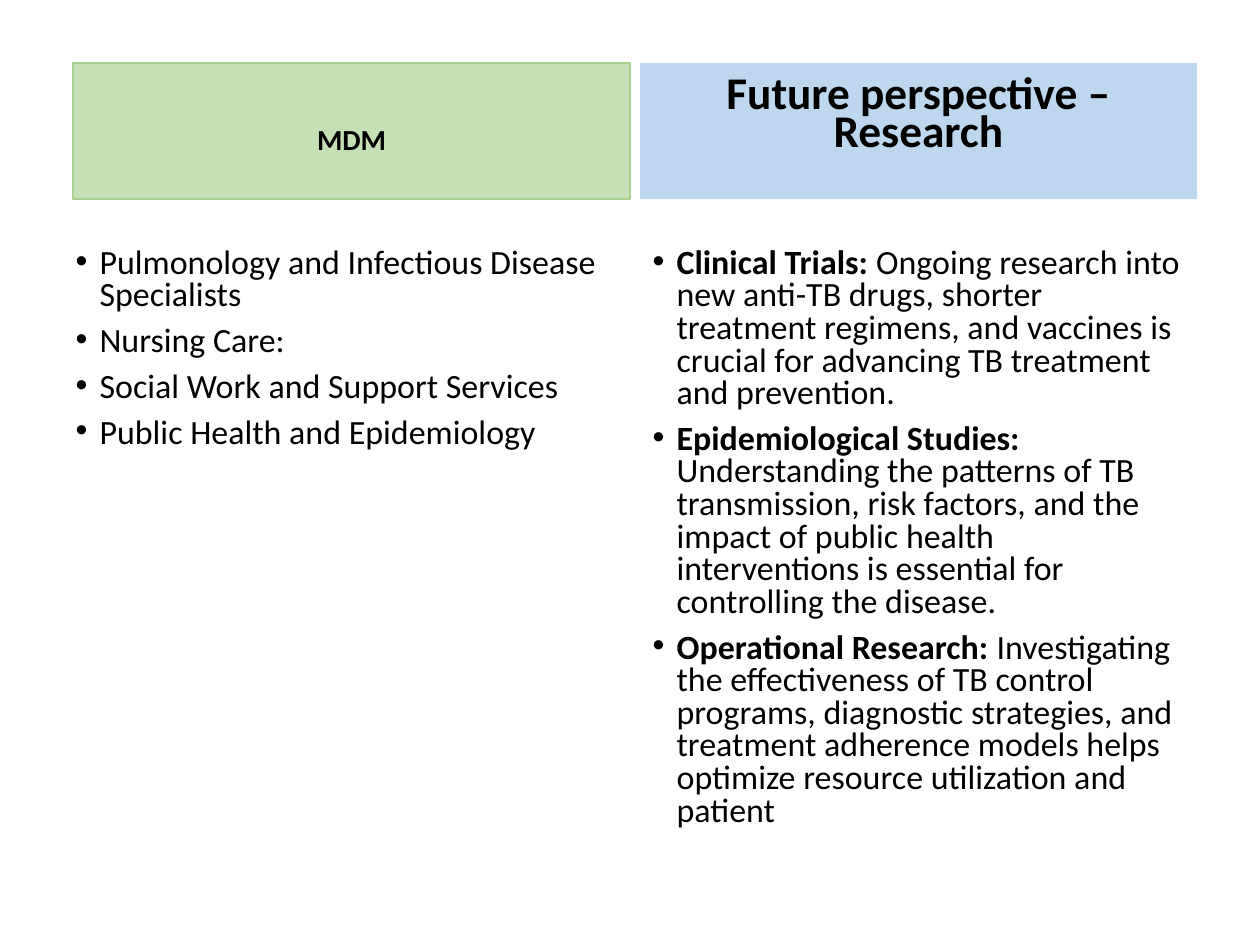
from dataclasses import dataclass

from lxml import etree
from pptx import Presentation
from pptx.dml.color import RGBColor
from pptx.enum.text import MSO_ANCHOR, MSO_AUTO_SIZE, PP_ALIGN
from pptx.oxml.ns import qn
from pptx.util import Inches, Pt

CENTER, LEFT = PP_ALIGN.CENTER, PP_ALIGN.LEFT
TOP, BOTTOM = MSO_ANCHOR.TOP, MSO_ANCHOR.BOTTOM
NO_AUTOFIT = MSO_AUTO_SIZE.NONE
COMPARISON_LAYOUT = 4


@dataclass(frozen=True)
class Theme:
    font: str = "Calibri"
    text: str = "000000"
    green: str = "C5E0B4"
    green_line: str = "A9D18E"
    blue: str = "BDD7EE"
    small_heading: float = 16.6
    large_heading: float = 25.9
    body: float = 19.4
    space_before: float = 7.5
    bullet_indent: float = 0.19


THEME = Theme()

# Page grid in inches: two equal columns with a gutter, a heading row and a list row
WIDTH, HEIGHT = 10, 7.5
MARGIN, GUTTER = 0.5, 0.16
COLUMN = (WIDTH - 2 * MARGIN - GUTTER) / 2
RIGHT_COLUMN = MARGIN + COLUMN + GUTTER
HEADING_TOP, HEADING_HEIGHT = 0.5, 1.08
LIST_TOP, LIST_HEIGHT = 1.92, 4.78
LEFT_HEADING_SHIFT = 0.08
HEADING_BOTTOM_INSET = 0.35

# Each list item is a bold lead and the text that follows it
TEAM = [
    ("", "Pulmonology and Infectious Disease Specialists"),
    ("", "Nursing Care:"),
    ("", "Social Work and Support Services"),
    ("", "Public Health and Epidemiology"),
]
RESEARCH = [
    ("Clinical Trials:",
     " Ongoing research into new anti-TB drugs, shorter treatment regimens, "
     "and vaccines is crucial for advancing TB treatment and prevention."),
    ("Epidemiological Studies:",
     " Understanding the patterns of TB transmission, risk factors, and the "
     "impact of public health interventions is essential for controlling the disease."),
    ("Operational Research:",
     " Investigating the effectiveness of TB control programs, diagnostic "
     "strategies, and treatment adherence models helps optimize resource "
     "utilization and patient"),
]


def place(shape, box, anchor, bottom_inset=0.05):
    """Put a placeholder in its box and set up its text frame."""
    shape.left, shape.top, shape.width, shape.height = map(Inches, box)
    frame = shape.text_frame
    frame.word_wrap = True
    frame.auto_size = NO_AUTOFIT
    frame.vertical_anchor = anchor
    frame.margin_bottom = Inches(bottom_inset)
    return frame


def add_bullet(paragraph):
    properties = paragraph._p.get_or_add_pPr()
    indent = Inches(THEME.bullet_indent)
    properties.set("marL", str(indent))
    properties.set("indent", str(-indent))
    etree.SubElement(properties, qn("a:buFont")).set("typeface", "Arial")
    etree.SubElement(properties, qn("a:buChar")).set("char", "•")


def write(paragraph, lead, text="", *, size, spacing, align=LEFT, bullet=False):
    """Write a bold lead and plain text into one paragraph."""
    paragraph.alignment = align
    paragraph.line_spacing = spacing
    paragraph.space_before = Pt(THEME.space_before)
    if bullet:
        add_bullet(paragraph)
    for words, bold in ((lead, True), (text, False)):
        if words:
            run = paragraph.add_run()
            run.text = words
            run.font.name = THEME.font
            run.font.size = Pt(size)
            run.font.bold = bold
            run.font.color.rgb = RGBColor.from_string(THEME.text)


def build_heading(shape, box, text, *, size, fill, line=None):
    frame = place(shape, box, BOTTOM, HEADING_BOTTOM_INSET)
    shape.fill.solid()
    shape.fill.fore_color.rgb = RGBColor.from_string(fill)
    if line:
        shape.line.color.rgb = RGBColor.from_string(line)
        shape.line.width = Pt(0.75)
    write(frame.paragraphs[0], text, size=size, spacing=0.7, align=CENTER)


def build_list(shape, box, items):
    frame = place(shape, box, TOP)
    for index, (lead, text) in enumerate(items):
        paragraph = frame.add_paragraph() if index else frame.paragraphs[0]
        write(paragraph, lead, text, size=THEME.body, spacing=0.8, bullet=True)


def main():
    presentation = Presentation()
    presentation.slide_width, presentation.slide_height = Inches(WIDTH), Inches(HEIGHT)
    slide = presentation.slides.add_slide(presentation.slide_layouts[COMPARISON_LAYOUT])

    # The slide has no title
    title = slide.shapes.title
    title.element.getparent().remove(title.element)
    left_heading, left_list, right_heading, right_list = slide.placeholders

    # Left column: care team
    build_heading(left_heading,
                  (MARGIN + LEFT_HEADING_SHIFT, HEADING_TOP, COLUMN, HEADING_HEIGHT),
                  "MDM", size=THEME.small_heading,
                  fill=THEME.green, line=THEME.green_line)
    build_list(left_list, (MARGIN, LIST_TOP, COLUMN, LIST_HEIGHT), TEAM)

    # Right column: research
    build_heading(right_heading, (RIGHT_COLUMN, HEADING_TOP, COLUMN, HEADING_HEIGHT),
                  "Future perspective – Research", size=THEME.large_heading,
                  fill=THEME.blue)
    build_list(right_list, (RIGHT_COLUMN, LIST_TOP, COLUMN, LIST_HEIGHT), RESEARCH)

    presentation.save("out.pptx")


if __name__ == "__main__":
    main()
